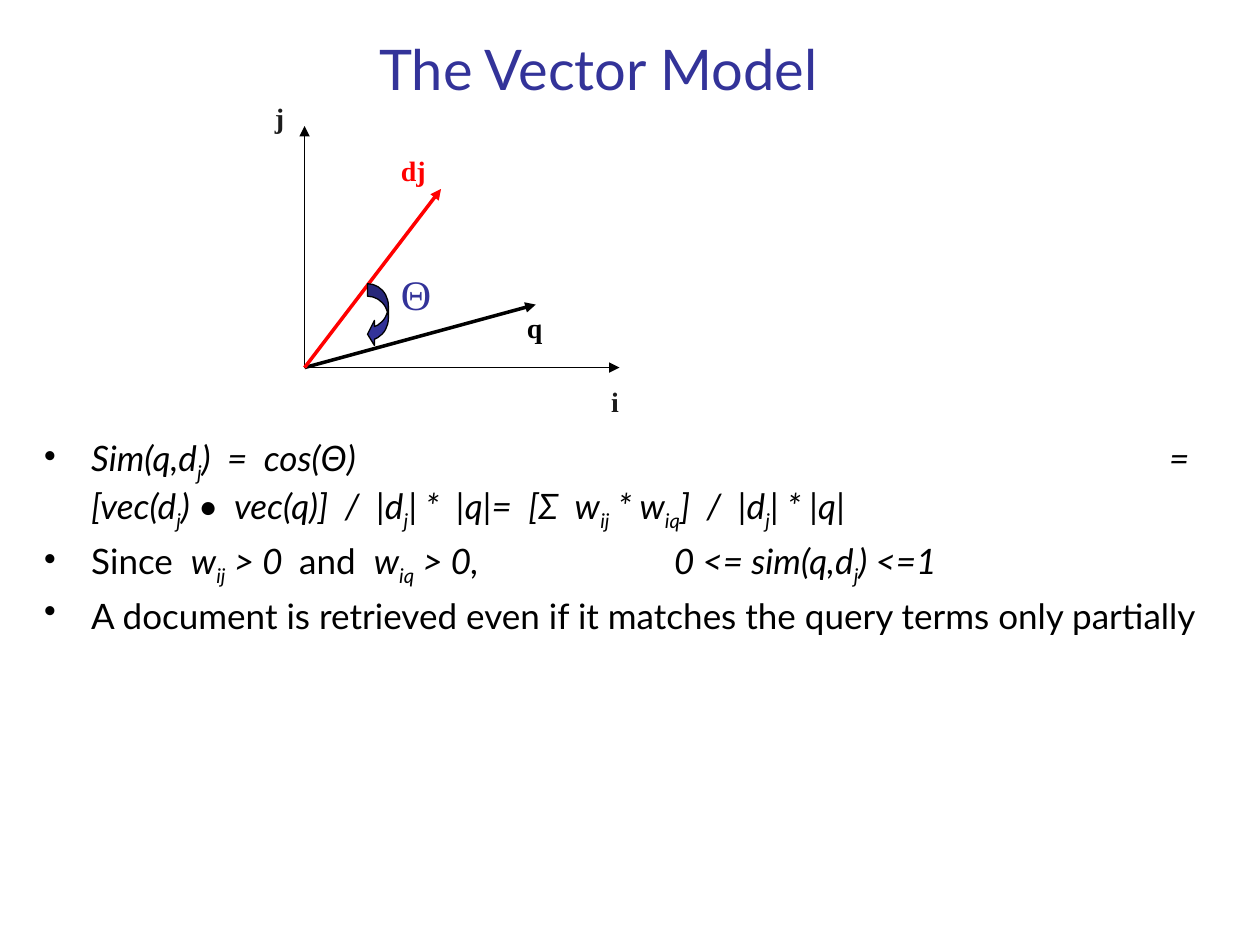
import pptx
import pptx.util
import pptx.dml.color
import pptx.enum.shapes
import pptx.enum.text
import pptx.oxml
import pptx.oxml.ns

Cm, Pt = pptx.util.Cm, pptx.util.Pt
Fit = pptx.enum.text.MSO_AUTO_SIZE

theme = {
    "ink": "000000", "dark": "1C1C1C", "red": "FF0000", "blue": "333399",
    "sans": "Lato", "serif": "Times New Roman",
    "title": 32, "body": 20, "label": 16, "angle": 24,
    "thin": 0.75, "thick": 2,
}

# Content: a tab stop in cm (or None), then runs of (text, style),
# with i = italic, s = italic subscript
title = "The Vector Model"
points = [
    (22.86, [
        ("Sim(q,d", "i"), ("j", "s"),
        (")  =  cos(Θ)\t=  [vec(d", "i"), ("j", "s"),
        (") •  vec(q)]  /  |d", "i"), ("j", "s"),
        ("| *  |q|=  [Σ  w", "i"), ("ij", "s"), (" * w", "i"), ("iq", "s"),
        ("]  /  |d", "i"), ("j", "s"), ("| * |q|", "i")]),
    (12.7, [
        ("Since  ", ""), ("w", "i"), ("ij", "s"), (" > 0  ", "i"),
        ("and  ", ""), ("w", "i"), ("iq", "s"),
        (" > 0,\t0 <= sim(q,d", "i"), ("j", "s"), (") <=1", "i")]),
    (None, [
        ("A document is retrieved even if it matches the query terms "
         "only partially", "")]),
]

# Plot, in cm: all arrows leave one origin
origin = (6.14, 7.41)
arrows = [  # run across, rise, colour, width
    (6.35, 0, "ink", "thin"),
    (0, 4.87, "ink", "thin"),
    (4.66, 1.27, "ink", "thick"),
    (2.75, 3.6, "red", "thick"),
]
labels = [  # text, left, top, width, height, colour, size, bold
    ("i", 12.07, 7.62, 0.66, 0.94, "dark", "label", True),
    ("j", 5.29, 1.91, 0.7, 0.94, "dark", "label", True),
    ("dj", 7.83, 2.97, 1.02, 0.94, "red", "label", True),
    ("q", 10.37, 6.14, 0.81, 0.94, "ink", "label", True),
    ("Θ", 7.83, 5.29, 1.14, 1.27, "blue", "angle", False),
]
curve = (7.41, 5.72, 0.42, 1.27)
bends = (0.6, 1.2, 0.333)


def tint(key):
    return pptx.dml.color.RGBColor.from_string(theme[key])


def style(para, face, size, hue, bold=False):
    font = para.font
    font.name, font.size, font.bold = theme[face], Pt(theme[size]), bold
    font.color.rgb = tint(hue)


def add_box(slide, box, wrap=True):
    frame = slide.shapes.add_textbox(*map(Cm, box)).text_frame
    frame.word_wrap = wrap
    frame.auto_size = Fit.NONE if wrap else Fit.SHAPE_TO_FIT_TEXT
    return frame


def add_xml(parent, tag, **attrs):
    node = pptx.oxml.parse_xml(
        f"<a:{tag} {pptx.oxml.ns.nsdecls('a')}/>")
    for key, val in attrs.items():
        node.set(key, val)
    parent.append(node)
    return node


def add_point(para, stop, runs):
    style(para, "sans", "body", "ink")
    para.space_before = Pt(4)
    props = para._p.get_or_add_pPr()
    props.set("marL", str(Cm(0.95)))
    props.set("indent", str(Cm(-0.95)))
    # Bullet and tab stop go ahead of the default run properties
    add_xml(props, "buChar", char="•")
    if stop:
        tabs = add_xml(props, "tabLst")
        add_xml(tabs, "tab", pos=str(Cm(stop)), algn="l")
    props.append(props.find(pptx.oxml.ns.qn("a:defRPr")))
    for text, kind in runs:
        run = para.add_run()
        run.text = text
        run.font.italic = bool(kind)
        if kind == "s":
            run._r.get_or_add_rPr().set("baseline", "-25000")


def add_arrow(slide, across, rise, hue, width):
    left, top = origin
    line = slide.shapes.add_connector(
        pptx.enum.shapes.MSO_CONNECTOR.STRAIGHT,
        Cm(left), Cm(top), Cm(left + across), Cm(top - rise))
    line.line.color.rgb = tint(hue)
    line.line.width = Pt(theme[width])
    add_xml(line.line._get_or_add_ln(), "tailEnd", type="triangle")
    add_xml(line._element.spPr, "effectLst")


def main():
    deck = pptx.Presentation()
    deck.slide_width, deck.slide_height = Cm(25.4), Cm(19.05)
    slide = deck.slides.add_slide(deck.slide_layouts[6])

    # Title
    frame = add_box(slide, (2.54, 0.42, 19.05, 1.91))
    frame.vertical_anchor = pptx.enum.text.MSO_ANCHOR.MIDDLE
    para = frame.paragraphs[0]
    para.text = title
    para.alignment = pptx.enum.text.PP_ALIGN.CENTER
    style(para, "sans", "title", "blue")

    # Bullet points
    frame = add_box(slide, (0.64, 8.68, 24.13, 7.62))
    for num, point in enumerate(points):
        para = frame.add_paragraph() if num else frame.paragraphs[0]
        add_point(para, *point)

    # Axes and vectors
    for arrow in arrows:
        add_arrow(slide, *arrow)

    # Angle between the vectors
    shape = slide.shapes.add_shape(
        pptx.enum.shapes.MSO_SHAPE.CURVED_LEFT_ARROW, *map(Cm, curve))
    for num, bend in enumerate(bends):
        shape.adjustments[num] = bend
    shape.shadow.inherit = False
    shape.fill.solid()
    shape.fill.fore_color.rgb = tint("blue")
    shape.line.color.rgb = tint("ink")
    shape.line.width = Pt(theme["thin"])

    # Labels
    for text, *box, hue, size, bold in labels:
        para = add_box(slide, box, wrap=False).paragraphs[0]
        para.text = text
        style(para, "serif", size, hue, bold)

    deck.save("out.pptx")


if __name__ == "__main__":
    main()
